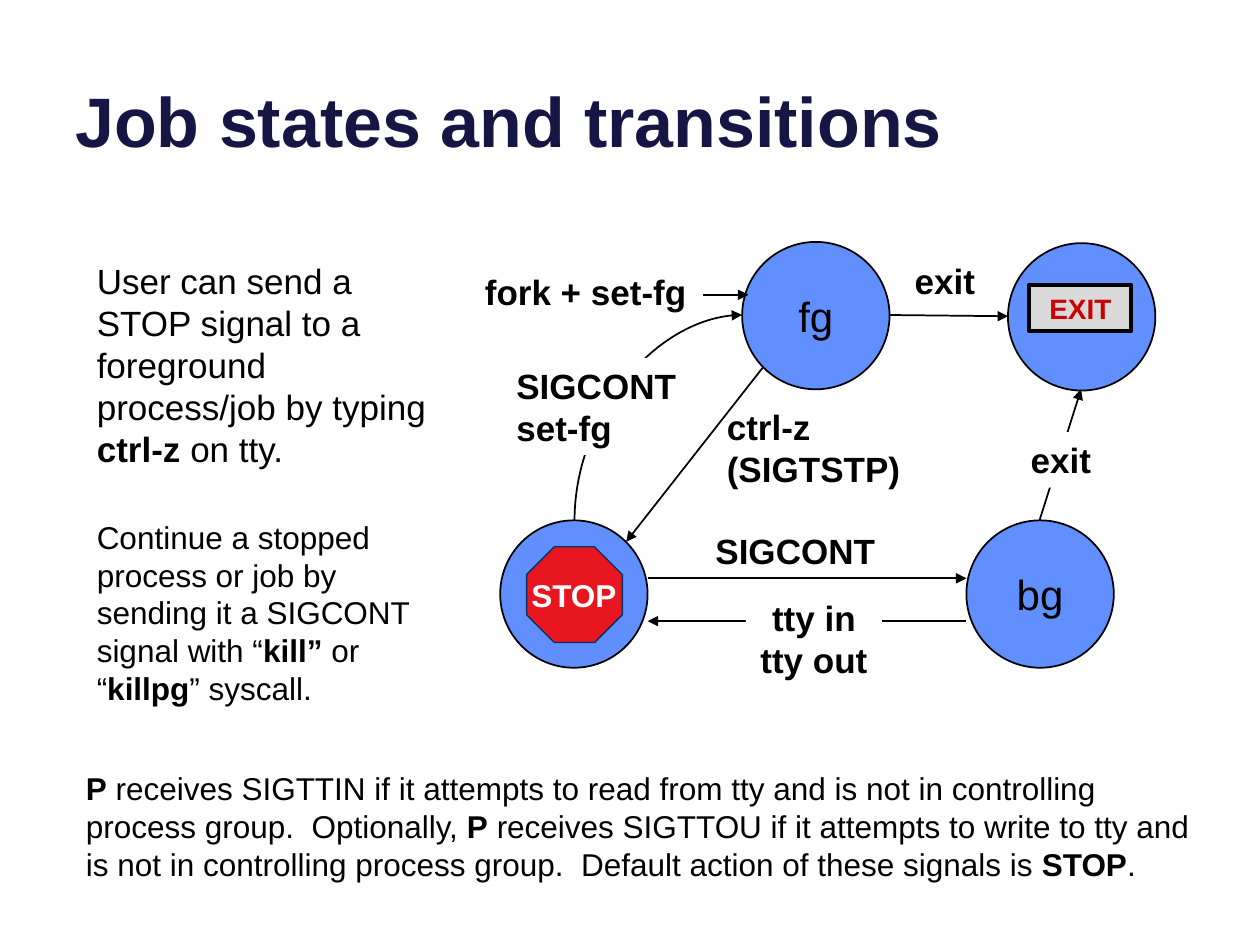
from dataclasses import dataclass

from lxml.etree import SubElement
from pptx import Presentation
from pptx.dml.color import RGBColor
from pptx.enum.shapes import MSO_CONNECTOR, MSO_SHAPE
from pptx.enum.text import MSO_ANCHOR, PP_ALIGN
from pptx.oxml.ns import qn
from pptx.util import Pt

BLACK = RGBColor(0x00, 0x00, 0x00)
WHITE = RGBColor(0xFF, 0xFF, 0xFF)
NAVY = RGBColor(0x16, 0x16, 0x45)
STATE_BLUE = RGBColor(0x61, 0x8F, 0xFD)
STOP_RED = RGBColor(0xE8, 0x16, 0x1F)
STOP_EDGE = RGBColor(0x00, 0x33, 0x67)
EXIT_RED = RGBColor(0xCC, 0x00, 0x00)
EXIT_GREY = RGBColor(0xD9, 0xD9, 0xD9)
FONT = "Arial"
DIAMETER = 84.24


@dataclass(frozen=True)
class Box:
    left: float
    top: float
    width: float
    height: float

    def lengths(self):
        return Pt(self.left), Pt(self.top), Pt(self.width), Pt(self.height)


@dataclass(frozen=True)
class State:
    left: float
    top: float
    name: str = ""


@dataclass(frozen=True)
class Transition:
    x1: float
    y1: float
    x2: float
    y2: float


@dataclass(frozen=True)
class Label:
    text: str
    box: Box
    align: PP_ALIGN = PP_ALIGN.LEFT
    masks_line: bool = False


STATES = [
    State(424.08, 138.24, "fg"),
    State(552.24, 297.36, "bg"),
    State(285.84, 297.36),
    State(576, 138.96),
]

TRANSITIONS = [
    Transition(436.32, 209.52, 357.84, 309.6),
    Transition(370.08, 330.48, 552.24, 330.48),
    Transition(508.32, 180, 576, 180.72),
    Transition(594, 297.36, 617.76, 222.48),
    Transition(552.24, 354.96, 370.08, 354.96),
    Transition(390.24, 168.48, 427.68, 168.48),
]

RESUME_CURVE = Transition(434.88, 286.56, 317.52, 190.8)

LABELS = [
    Label("exit", Box(570.24, 246.96, 72, 31.68), PP_ALIGN.CENTER, True),
    Label("exit", Box(504, 144.72, 72, 31.68), PP_ALIGN.CENTER),
    Label("tty in\ntty out", Box(426.24, 336.96, 77.76, 55.44), PP_ALIGN.CENTER, True),
    Label("SIGCONT", Box(401.76, 298.8, 108, 31.68)),
    Label("SIGCONT\nset-fg", Box(288, 204.48, 108, 55.44), masks_line=True),
    Label("ctrl-z (SIGTSTP)", Box(408.24, 228.24, 113.76, 55.44)),
    Label("fork + set-fg", Box(270, 150.48, 131.76, 31.68), masks_line=True),
]

TTY_NOTE = (
    "**P** receives SIGTTIN if it attempts to read from tty and is not in controlling "
    "process group.  Optionally, **P** receives SIGTTOU if it attempts to write to tty "
    "and is not in controlling process group.  Default action of these signals is **STOP**."
)
STOP_NOTE = (
    "User can send a STOP signal to a foreground process/job by typing **ctrl-z** on tty."
)
CONTINUE_NOTE = (
    "Continue a stopped process or job by sending it a SIGCONT signal with "
    "“**kill”** or “**killpg**” syscall."
)


def write(shape, text: str, *, size: float, color: RGBColor = BLACK, bold: bool = False,
          align: PP_ALIGN = PP_ALIGN.LEFT, anchor: MSO_ANCHOR = MSO_ANCHOR.MIDDLE,
          wrap: bool = True) -> None:
    frame = shape.text_frame
    frame.word_wrap = wrap
    frame.vertical_anchor = anchor
    for index, line in enumerate(text.split("\n")):
        paragraph = frame.add_paragraph() if index else frame.paragraphs[0]
        paragraph.alignment = align
        for part, words in enumerate(line.split("**")):
            if words:
                run = paragraph.add_run()
                run.text = words
                run.font.name = FONT
                run.font.size = Pt(size)
                run.font.bold = bold or part % 2 == 1
                run.font.color.rgb = color


def add_filled(slide, preset: MSO_SHAPE, box: Box, fill: RGBColor,
               edge: RGBColor | None = None, weight: float = 1):
    shape = slide.shapes.add_shape(preset, *box.lengths())
    shape.shadow.inherit = False
    shape.fill.solid()
    shape.fill.fore_color.rgb = fill
    if edge is None:
        shape.line.fill.background()
    else:
        shape.line.color.rgb = edge
        shape.line.width = Pt(weight)
    return shape


def add_text(slide, text: str, box: Box, **text_format) -> None:
    write(slide.shapes.add_textbox(*box.lengths()), text, **text_format)


def add_state(slide, state: State) -> None:
    circle = add_filled(slide, MSO_SHAPE.OVAL,
                        Box(state.left, state.top, DIAMETER, DIAMETER), STATE_BLUE, BLACK)
    if state.name:
        write(circle, state.name, size=24, align=PP_ALIGN.CENTER, wrap=False)


def add_arrow(slide, move: Transition, kind: MSO_CONNECTOR = MSO_CONNECTOR.STRAIGHT):
    arrow = slide.shapes.add_connector(kind, Pt(move.x1), Pt(move.y1), Pt(move.x2), Pt(move.y2))
    arrow.line.color.rgb = BLACK
    arrow.line.width = Pt(1)
    properties = arrow.element.spPr
    SubElement(properties.find(qn("a:ln")), qn("a:tailEnd"), type="triangle", w="med", len="med")
    SubElement(properties, qn("a:effectLst"))
    return arrow


def add_quarter_curve(slide, move: Transition) -> None:
    properties = add_arrow(slide, move, MSO_CONNECTOR.CURVE).element.spPr
    properties.find(qn("a:prstGeom")).set("prst", "curvedConnector2")
    properties.find(qn("a:xfrm")).set("rot", str(90 * 60000))


def add_label(slide, label: Label) -> None:
    text_format = dict(size=20, bold=True, align=label.align)
    if label.masks_line:
        mask = add_filled(slide, MSO_SHAPE.RECTANGLE, label.box, WHITE)
        write(mask, label.text, **text_format)
    else:
        add_text(slide, label.text, label.box, **text_format)


def main() -> None:
    deck = Presentation()
    deck.slide_width, deck.slide_height = Pt(720), Pt(540)
    slide = deck.slides.add_slide(deck.slide_layouts[6])

    add_text(slide, "Job states and transitions", Box(36, 24, 648, 71.76),
             size=40, color=NAVY, bold=True, anchor=MSO_ANCHOR.BOTTOM)
    for state in STATES:
        add_state(slide, state)
    for move in TRANSITIONS:
        add_arrow(slide, move)
    add_quarter_curve(slide, RESUME_CURVE)
    for label in LABELS:
        add_label(slide, label)

    stop_sign = add_filled(slide, MSO_SHAPE.OCTAGON, Box(300.96, 312.48, 54.72, 54.72),
                           STOP_RED, STOP_EDGE, 0.75)
    stop_sign.adjustments[0] = 0.29
    add_text(slide, "STOP", Box(295.92, 325.44, 64.08, 28.8), size=18, color=WHITE,
             bold=True, align=PP_ALIGN.CENTER, wrap=False)
    exit_sign = add_filled(slide, MSO_SHAPE.RECTANGLE, Box(588.24, 162.72, 58.32, 26.64),
                           EXIT_GREY, BLACK, 2.25)
    write(exit_sign, "EXIT", size=16, color=EXIT_RED, bold=True, align=PP_ALIGN.CENTER)

    add_text(slide, TTY_NOTE, Box(42, 435.6, 648, 72.72), size=18)
    add_text(slide, STOP_NOTE, Box(48.24, 144, 203.76, 128.16), size=20)
    add_text(slide, CONTINUE_NOTE, Box(48.24, 291.6, 203.76, 116.64), size=18)
    deck.save("out.pptx")


if __name__ == "__main__":
    main()
